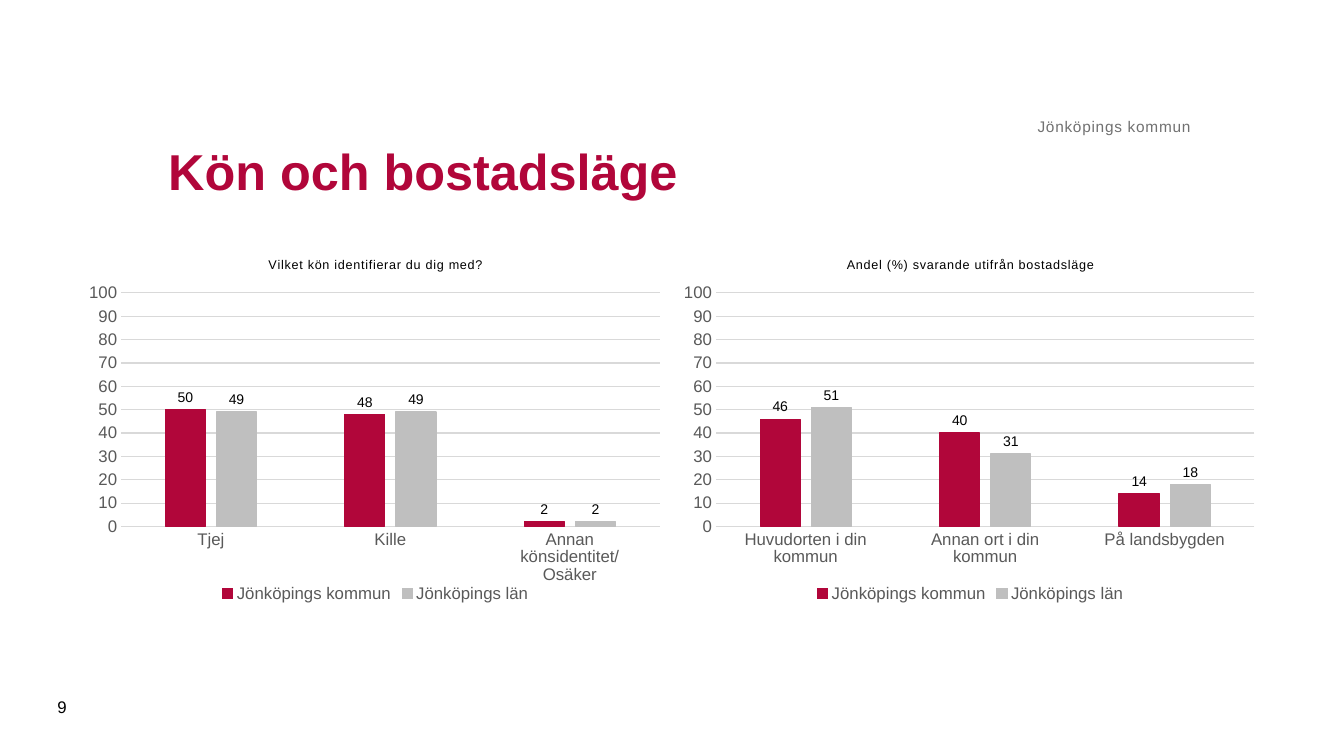
import pptx
import pptx.chart.data
import pptx.dml.color
import pptx.enum.chart
import pptx.enum.text
import pptx.oxml
import pptx.util
from pptx.util import Inches

FONT = "Arial"
RED, SILVER, GREY, RULE, BLACK = "B1063A", "BFBFBF", "595959", "D9D9D9", "000000"
NUMBER_FORMAT = "#,##0;#,##0"
SERIES = [("Jönköpings kommun", RED), ("Jönköpings län", SILVER)]
CHARTS = [
    ("Vilket kön identifierar du dig med?",
     ["Tjej", "Kille", "Annan könsidentitet/Osäker"],
     [(50, 48, 2), (49, 49, 2)]),
    ("Andel (%) svarande utifrån bostadsläge",
     ["Huvudorten i din kommun", "Annan ort i din kommun", "På landsbygden"],
     [(46, 40, 14), (51, 31, 18)]),
]
CHART_LEFT, CHART_TOP, CHART_WIDTH, CHART_HEIGHT = 0.79, 2.4, 5.87, 3.62
CHART_STEP = 5.9
PLOT_AREA = {"x": 0.07, "y": 0.14, "w": 0.91, "h": 0.64}


def color(value):
    return pptx.dml.color.RGBColor.from_string(value)


def style_font(font, size, value, bold=False):
    font.name = FONT
    font.size = pptx.util.Pt(size)
    font.bold = bold
    font.color.rgb = color(value)


def style_line(line, value):
    line.color.rgb = color(value)
    line.width = pptx.util.Pt(0.75)


def add_text(slide, box, text, size, value, anchor, align="LEFT", bold=False, inset=None, spacing=None):
    shape = slide.shapes.add_textbox(*map(Inches, box))
    frame = shape.text_frame
    frame.word_wrap = True
    frame.vertical_anchor = getattr(pptx.enum.text.MSO_ANCHOR, anchor)
    if inset is not None:
        frame.margin_left = frame.margin_right = Inches(inset)
        frame.margin_top = frame.margin_bottom = Inches(inset)
    paragraph = frame.paragraphs[0]
    paragraph.alignment = getattr(pptx.enum.text.PP_ALIGN, align)
    run = paragraph.add_run()
    run.text = text
    style_font(run.font, size, value, bold)
    if spacing:
        run.font._element.set("spc", str(spacing))


def set_plot_layout(chart):
    plot_area = chart._chartSpace.chart.plotArea
    for layout in plot_area.findall(pptx.oxml.ns.qn("c:layout")):
        plot_area.remove(layout)
    namespace = pptx.oxml.ns.nsdecls("c")
    sizes = "".join(f'<c:{key} val="{value}"/>' for key, value in PLOT_AREA.items())
    plot_area.insert(0, pptx.oxml.parse_xml(
        f'<c:layout {namespace}><c:manualLayout><c:layoutTarget val="inner"/>'
        f'<c:xMode val="edge"/><c:yMode val="edge"/>{sizes}</c:manualLayout></c:layout>'))


def style_axes(chart):
    for axis in (chart.category_axis, chart.value_axis):
        axis.major_tick_mark = pptx.enum.chart.XL_TICK_MARK.NONE
        axis.minor_tick_mark = pptx.enum.chart.XL_TICK_MARK.NONE
        style_font(axis.tick_labels.font, 12, GREY)
    style_line(chart.category_axis.format.line, RULE)
    values = chart.value_axis
    values.minimum_scale, values.maximum_scale, values.major_unit = 0, 100, 10
    values.tick_labels.number_format = NUMBER_FORMAT
    values.tick_labels.number_format_is_linked = False
    values.format.line.fill.background()
    style_line(values.major_gridlines.format.line, RULE)


def style_series(plot):
    plot.gap_width, plot.overlap, plot.vary_by_categories = 219, -27, False
    for series, (name, value) in zip(plot.series, SERIES):
        series.format.fill.solid()
        series.format.fill.fore_color.rgb = color(value)
        style_line(series.format.line, value)
        labels = series.data_labels
        labels.show_value = True
        labels.position = pptx.enum.chart.XL_LABEL_POSITION.OUTSIDE_END
        labels.number_format = NUMBER_FORMAT
        labels.number_format_is_linked = False
        style_font(labels.font, 10, BLACK)


def add_bar_chart(slide, left, title, categories, columns):
    data = pptx.chart.data.CategoryChartData(number_format=NUMBER_FORMAT)
    data.categories = categories
    for (name, value), column in zip(SERIES, columns):
        data.add_series(name, column)
    box = map(Inches, (left, CHART_TOP, CHART_WIDTH, CHART_HEIGHT))
    chart = slide.shapes.add_chart(pptx.enum.chart.XL_CHART_TYPE.COLUMN_CLUSTERED, *box, data).chart
    style_font(chart.font, 10, BLACK)
    chart.has_title = True
    run = chart.chart_title.text_frame.paragraphs[0].add_run()
    run.text = title
    style_font(run.font, 9, BLACK)
    run.font._element.set("spc", "50")
    chart.chart_title.include_in_layout = False
    chart.has_legend = True
    chart.legend.position = pptx.enum.chart.XL_LEGEND_POSITION.BOTTOM
    chart.legend.include_in_layout = False
    style_font(chart.legend.font, 12, GREY)
    style_axes(chart)
    style_series(chart.plots[0])
    set_plot_layout(chart)


def main():
    presentation = pptx.Presentation()
    presentation.slide_width, presentation.slide_height = Inches(13.33), Inches(7.5)
    slide = presentation.slides.add_slide(presentation.slide_layouts[6])
    for index, content in enumerate(CHARTS):
        add_bar_chart(slide, CHART_LEFT + index * CHART_STEP, *content)
    add_text(slide, (1.57, 0.98, 10.24, 1.42), "Kön och bostadsläge", 36, RED, "MIDDLE", bold=True)
    add_text(slide, (1.57, 0.62, 10.24, 0.73), "Jönköpings kommun", 11, "717171", "BOTTOM",
             align="RIGHT", inset=0, spacing=50)
    add_text(slide, (0.47, 6.81, 0.57, 0.4), "9", 12, BLACK, "MIDDLE")
    presentation.save("out.pptx")


if __name__ == "__main__":
    main()
